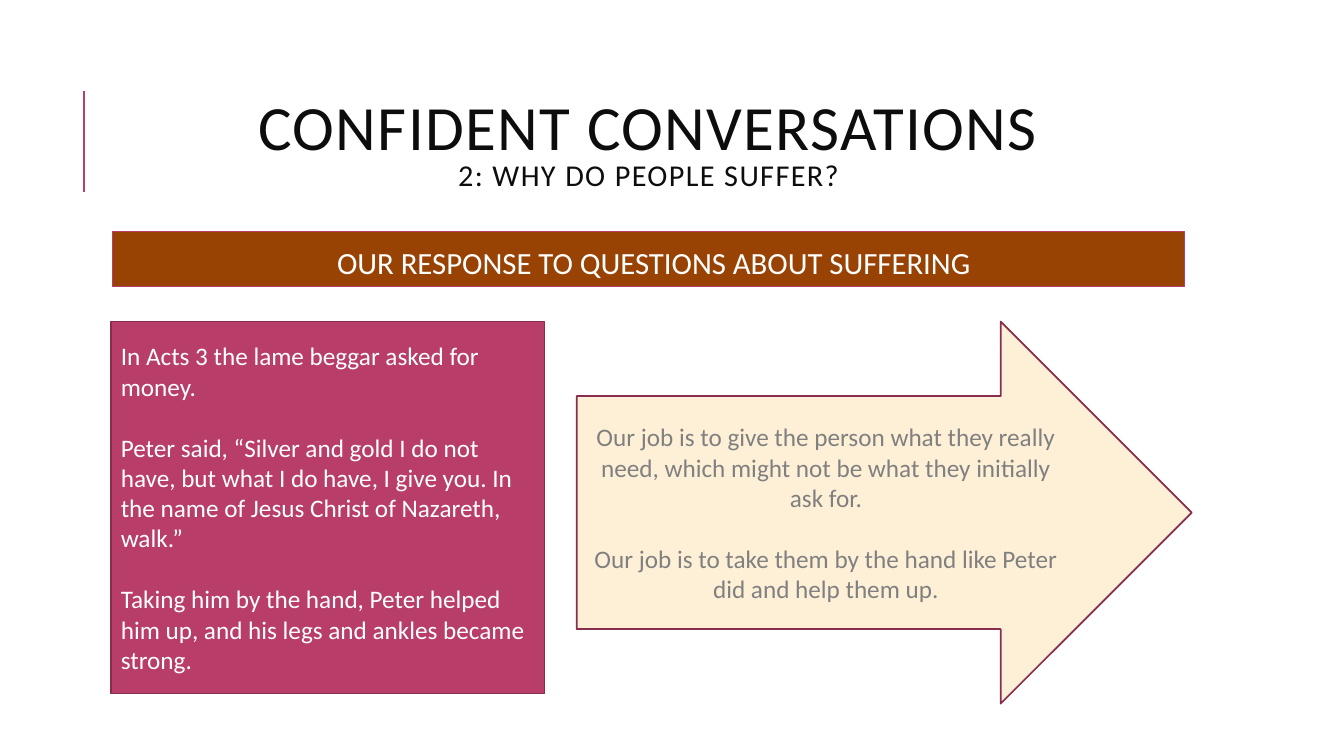
import pptx
import pptx.util
import pptx.dml.color
import pptx.enum.shapes
import pptx.enum.text
from lxml import etree
from pptx.util import Inches, Pt

RGB = pptx.dml.color.RGBColor
SHAPE = pptx.enum.shapes.MSO_SHAPE
ALIGN = pptx.enum.text.PP_ALIGN
ANCHOR = pptx.enum.text.MSO_ANCHOR

INK = RGB(0x0D, 0x0D, 0x0D)
WHITE = RGB(0xFF, 0xFF, 0xFF)
GREY = RGB(0x80, 0x80, 0x80)
ROSE = RGB(0xB8, 0x3D, 0x68)
WINE = RGB(0x88, 0x2D, 0x4D)
BROWN = RGB(0x98, 0x42, 0x04)
CREAM = RGB(0xFE, 0xF0, 0xD7)

TITLE = [("CONFIDENT CONVERSATIONS", 45), ("2: WHY DO PEOPLE SUFFER?", 21.6)]
BANNER = ["OUR RESPONSE TO QUESTIONS ABOUT SUFFERING"]
STORY = [
    "In Acts 3 the lame beggar asked for money.",
    "Peter said, “Silver and gold I do not have, but what I do have, I give you. "
    "In the name of Jesus Christ of Nazareth, walk.”",
    "Taking him by the hand, Peter helped him up, and his legs and ankles became strong.",
]
LESSON = [
    "Our job is to give the person what they really need, "
    "which might not be what they initially ask for.",
    "Our job is to take them by the hand like Peter did and help them up.",
]


def add_rule(slide, x, top, end):
    rule = slide.shapes.add_connector(
        pptx.enum.shapes.MSO_CONNECTOR.STRAIGHT,
        Inches(x), Inches(end), Inches(x), Inches(top))
    rule.line.color.rgb = ROSE
    rule.line.width = Pt(1.5)
    etree.SubElement(rule._element.spPr, pptx.oxml.ns.qn("a:effectLst"))


def add_title(slide, box, lines):
    frame = slide.shapes.add_textbox(*map(Inches, box)).text_frame
    frame.word_wrap = True
    frame.vertical_anchor = ANCHOR.MIDDLE
    para = frame.paragraphs[0]
    para.alignment = ALIGN.CENTER
    para.line_spacing = 0.8
    para.font.name = "Calibri"
    para.font.color.rgb = INK
    for i, (text, size) in enumerate(lines):
        if i:
            para.add_line_break()
        run = para.add_run()
        run.text = text
        run.font.name = "Calibri"
        run.font.color.rgb = INK
        run.font.size = Pt(size)
        run._r.get_or_add_rPr().set("spc", "100")


def add_panel(slide, kind, box, fill, edge, width, texts, size, color, align):
    panel = slide.shapes.add_shape(kind, *map(Inches, box))
    panel.shadow.inherit = False
    panel.fill.solid()
    panel.fill.fore_color.rgb = fill
    panel.line.color.rgb = edge
    panel.line.width = Pt(width)
    frame = panel.text_frame
    frame.word_wrap = True
    frame.vertical_anchor = ANCHOR.MIDDLE
    for i, text in enumerate(texts):
        para = frame.add_paragraph() if i else frame.paragraphs[0]
        para.text = text
        para.alignment = align
        para.font.name = "Calibri"
        para.font.size = Pt(size)
        para.font.color.rgb = color
        if i:
            para.space_before = Pt(22)
    return panel


def main():
    deck = pptx.Presentation()
    deck.slide_width = Inches(13.33)
    deck.slide_height = Inches(7.5)
    slide = deck.slides.add_slide(deck.slide_layouts[6])

    add_rule(slide, 0.83, 0.9, 1.9)
    add_title(slide, (1.12, 0.64, 10.63, 1.64), TITLE)
    add_panel(slide, SHAPE.RECTANGLE, (1.1, 3.19, 4.3, 3.69),
              ROSE, WINE, 1.25, STORY, 18, WHITE, ALIGN.LEFT)

    banner = add_panel(slide, SHAPE.RECTANGLE, (1.12, 2.3, 10.63, 0.54),
                       BROWN, ROSE, 0.75, BANNER, 22, WHITE, ALIGN.CENTER)
    frame = banner.text_frame
    frame.vertical_anchor = ANCHOR.TOP
    frame.margin_left = Inches(0.15)
    frame.margin_right = frame.margin_top = frame.margin_bottom = Inches(0.05)
    frame.paragraphs[0].line_spacing = 1.2

    arrow = add_panel(slide, SHAPE.RIGHT_ARROW, (5.72, 3.19, 6.1, 3.79),
                      CREAM, WINE, 1.25, LESSON, 18, GREY, ALIGN.CENTER)
    arrow.adjustments[0] = 0.61
    arrow.adjustments[1] = 0.5

    deck.save("out.pptx")


if __name__ == "__main__":
    main()
